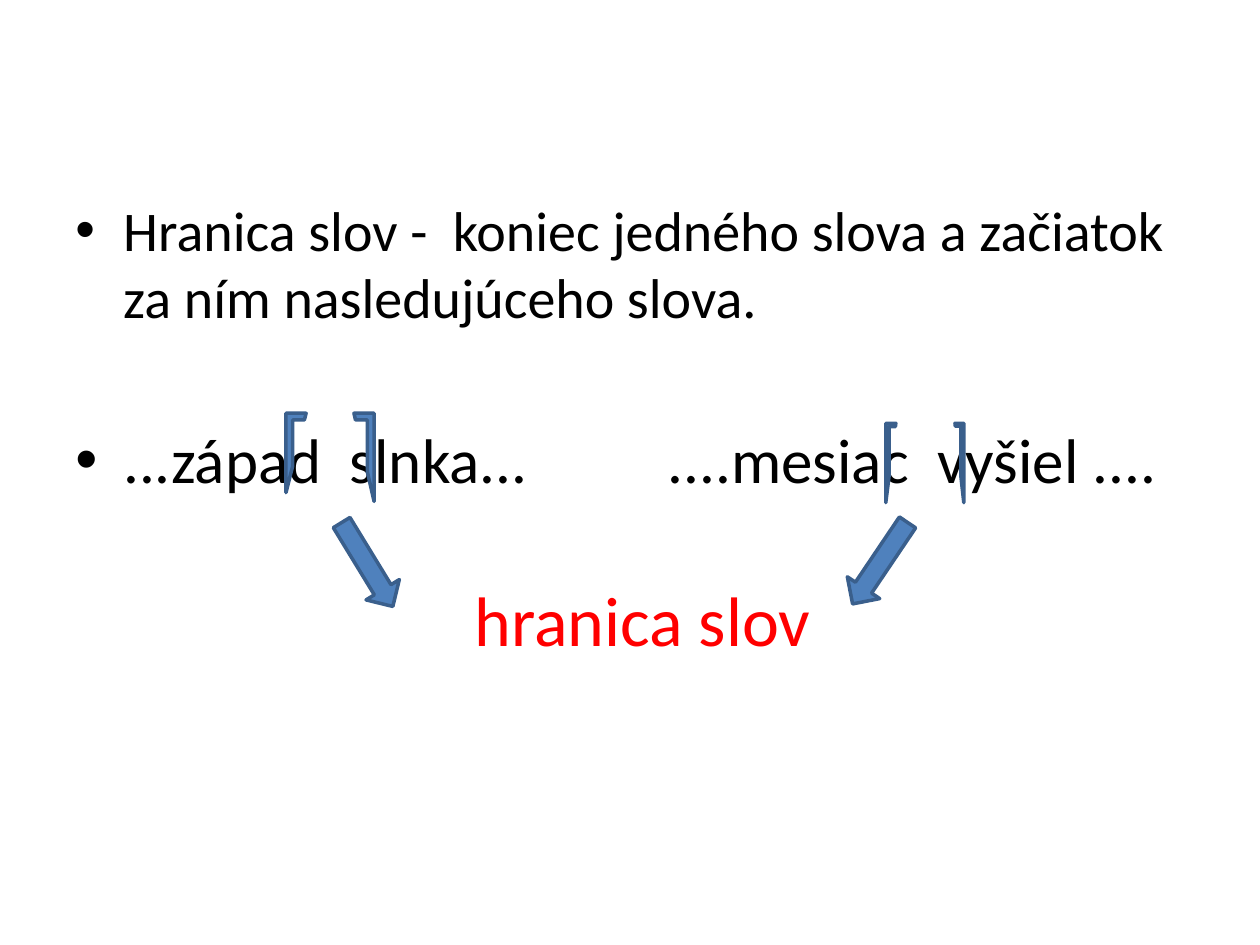
from lxml import etree
from pptx import Presentation
from pptx.dml.color import RGBColor
from pptx.enum.shapes import MSO_SHAPE
from pptx.oxml.ns import qn
from pptx.util import Inches, Pt

HALF_FRAME = MSO_SHAPE.HALF_FRAME
DOWN_ARROW = MSO_SHAPE.DOWN_ARROW


def paint(color_format, hex_color):
    color_format.rgb = RGBColor.from_string(hex_color)


def add_text(left, top, width, height, lines, color="000000", inset=0.0):
    """Add a text box; lines holds (text, size, space before) in points."""
    frame = slide.shapes.add_textbox(
        Inches(left), Inches(top), Inches(width), Inches(height)).text_frame
    frame.word_wrap = True
    frame.margin_left = frame.margin_right = Inches(inset)
    frame.margin_top = frame.margin_bottom = Inches(inset / 2)
    for index, (text, size, space_before) in enumerate(lines):
        paragraph = frame.paragraphs[0] if index == 0 else frame.add_paragraph()
        paragraph.text = text
        paragraph.font.name = "Calibri"
        paragraph.font.size = Pt(size)
        paint(paragraph.font.color, color)
        if space_before:
            paragraph.space_before = Pt(space_before)
    return frame


presentation = Presentation()
presentation.slide_width = Inches(10)
presentation.slide_height = Inches(7.5)
slide = presentation.slides.add_slide(presentation.slide_layouts[6])

definition = add_text(0.5, 1.5, 9, 5.2, [
    ("Hranica slov -  koniec jedného slova a začiatok za ním nasledujúceho slova.", 32, 0),
    ("...západ  slnka...", 36, 52),
], inset=0.1)
for paragraph in definition.paragraphs:
    properties = paragraph._p.get_or_add_pPr()
    properties.set("marL", str(Inches(0.38)))
    properties.set("indent", str(Inches(-0.38)))
    bullet_font = etree.Element(qn("a:buFont"), typeface="Arial")
    bullet = etree.Element(qn("a:buChar"), char="•")
    # Bullet elements come before the default run properties.
    default_run = properties.find(qn("a:defRPr"))
    default_run.addprevious(bullet_font)
    default_run.addprevious(bullet)

add_text(5.3, 3.34, 4.1, 0.61, [("....mesiac  vyšiel ....", 36, 0)])

# kind, left, top, width, height, rotation, mirrored
word_marks = [
    (HALF_FRAME, 2.27, 3.28, 0.16, 0.63, 0, False),
    (HALF_FRAME, 2.81, 3.28, 0.16, 0.7, 0, True),
    (HALF_FRAME, 7.03, 3.36, 0.08, 0.63, 0, False),
    (HALF_FRAME, 7.58, 3.36, 0.07, 0.63, 0, True),
    (DOWN_ARROW, 2.76, 4.09, 0.31, 0.78, 328.6, False),
    (DOWN_ARROW, 6.83, 4.08, 0.31, 0.78, 34, False),
]
for kind, left, top, width, height, rotation, mirrored in word_marks:
    mark = slide.shapes.add_shape(
        kind, Inches(left), Inches(top), Inches(width), Inches(height))
    mark.shadow.inherit = False
    mark.rotation = rotation
    mark.fill.solid()
    paint(mark.fill.fore_color, "4F81BD")
    paint(mark.line.color, "3A5F8C")
    mark.line.width = Pt(2)
    if mirrored:
        mark._element.spPr.find(qn("a:xfrm")).set("flipH", "1")

add_text(3.67, 4.53, 4.38, 0.77, [("hranica slov", 40, 0)], "FF0000", inset=0.1)

presentation.save("out.pptx")
